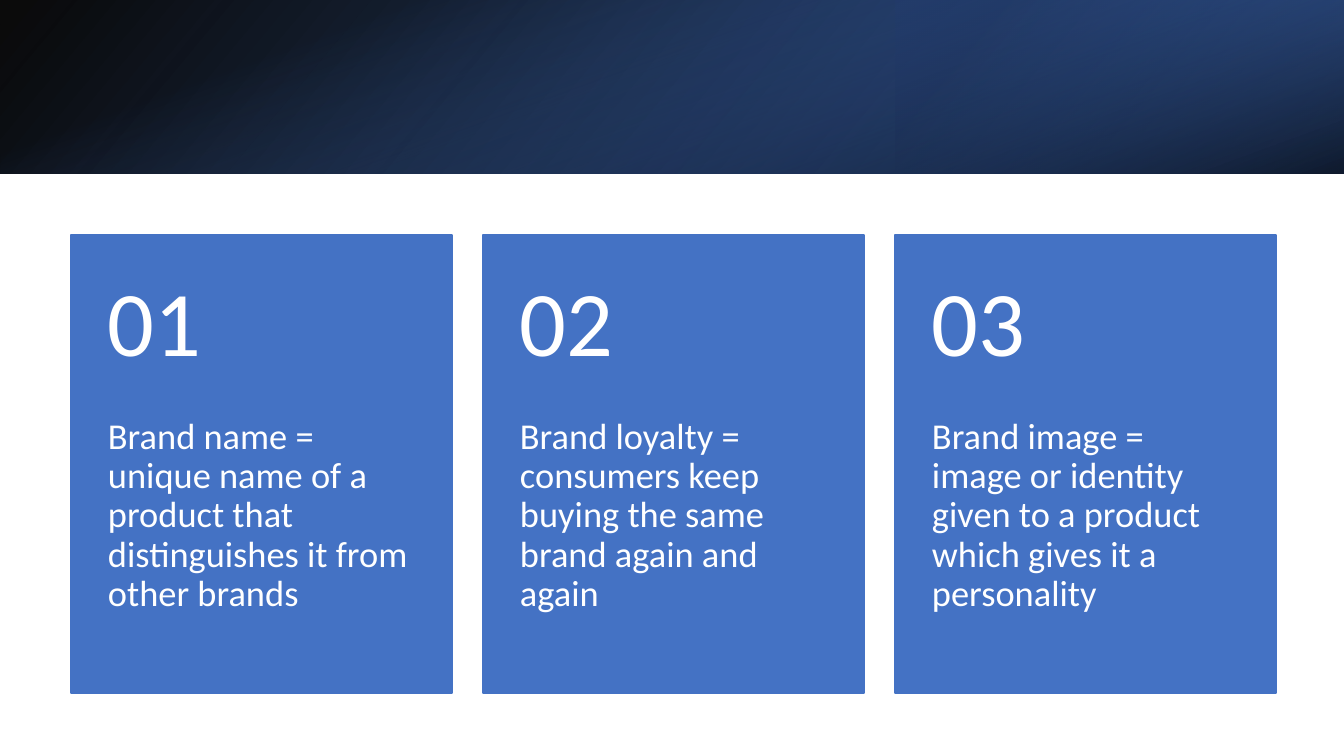
from pptx import Presentation
from pptx.dml.color import RGBColor as RGB
from pptx.enum.shapes import MSO_SHAPE as SHAPE
from pptx.enum.text import MSO_ANCHOR as ANCHOR
from pptx.oxml import parse_xml
from pptx.oxml.ns import nsdecls, qn
from pptx.util import Emu, Pt

COLORS = {
    "black": "000000",
    "deep": "2F5597",
    "navy": "203864",
    "blue": "4472C4",
    "white": "FFFFFF",
}
FONT = "Calibri"
W, H, BAND_H = 1344, 756, 174


def px(n):
    return Emu(round(n * 914400 / 100.8))


def add_text(x, y, w, h, text, size, anchor, top, bottom):
    tf = s.shapes.add_textbox(px(x), px(y), px(w), px(h)).text_frame
    tf.word_wrap = True
    tf.vertical_anchor = anchor
    tf.margin_left = tf.margin_right = px(37)
    tf.margin_top, tf.margin_bottom = px(top), px(bottom)
    p = tf.paragraphs[0]
    p.line_spacing = 0.9
    r = p.add_run()
    r.text = text
    r.font.name = FONT
    r.font.size = Pt(size)
    r.font.color.rgb = RGB.from_string(COLORS["white"])


prs = Presentation()
prs.slide_width, prs.slide_height = px(W), px(H)
s = prs.slides.add_slide(prs.slide_layouts[6])

third = W // 3
offset = (W - BAND_H) // 2
bands = [
    (0, 0, W, BAND_H, 0, True, 140, [(0, "black", 96), (100, "deep", 100)]),
    (W - third, 0, third, BAND_H, 180, True, 320, [(19, "navy", 68), (100, "blue", 79)]),
    (offset, -offset, BAND_H, W, 90, False, 340, [(23, "blue", 0), (99, "black", 74)]),
]
for x, y, w, h, rotation, flip, angle, stops in bands:
    sp = s.shapes.add_shape(SHAPE.RECTANGLE, px(x), px(y), px(w), px(h))
    sp.shadow.inherit = False
    sp.line.fill.background()
    sp.rotation = rotation
    sp.fill.gradient()
    spPr = sp._element.spPr
    if flip:
        spPr.xfrm.set("flipH", "1")
    gs = "".join(
        f'<a:gs pos="{pos * 1000}"><a:srgbClr val="{COLORS[color]}">'
        f'<a:alpha val="{alpha * 1000}"/></a:srgbClr></a:gs>'
        for pos, color, alpha in stops
    )
    grad = parse_xml(
        f'<a:gradFill {nsdecls("a")} rotWithShape="1"><a:gsLst>{gs}</a:gsLst>'
        f'<a:lin ang="{angle * 60000}" scaled="0"/></a:gradFill>'
    )
    spPr.replace(spPr.find(qn("a:gradFill")), grad)

definitions = [
    "Brand name = unique name of a product that distinguishes it from other brands",
    "Brand loyalty = consumers keep buying the same brand again and again",
    "Brand image = image or identity given to a product which gives it a personality",
]
LEFT, TOP, CARD_W, CARD_H, STEP, HEAD_H = 71, 235, 381, 458, 412, 183
for i, definition in enumerate(definitions):
    x = LEFT + i * STEP
    sp = s.shapes.add_shape(SHAPE.RECTANGLE, px(x), px(TOP), px(CARD_W), px(CARD_H))
    sp.shadow.inherit = False
    sp.fill.solid()
    sp.fill.fore_color.rgb = RGB.from_string(COLORS["blue"])
    sp.line.color.rgb = RGB.from_string(COLORS["blue"])
    sp.line.width = Pt(1)
    add_text(x, TOP + HEAD_H, CARD_W, CARD_H - HEAD_H, definition, 26, ANCHOR.TOP, 0, 36)
    add_text(x, TOP, CARD_W, HEAD_H, f"{i + 1:02}", 66, ANCHOR.MIDDLE, 18, 18)

prs.save("out.pptx")
